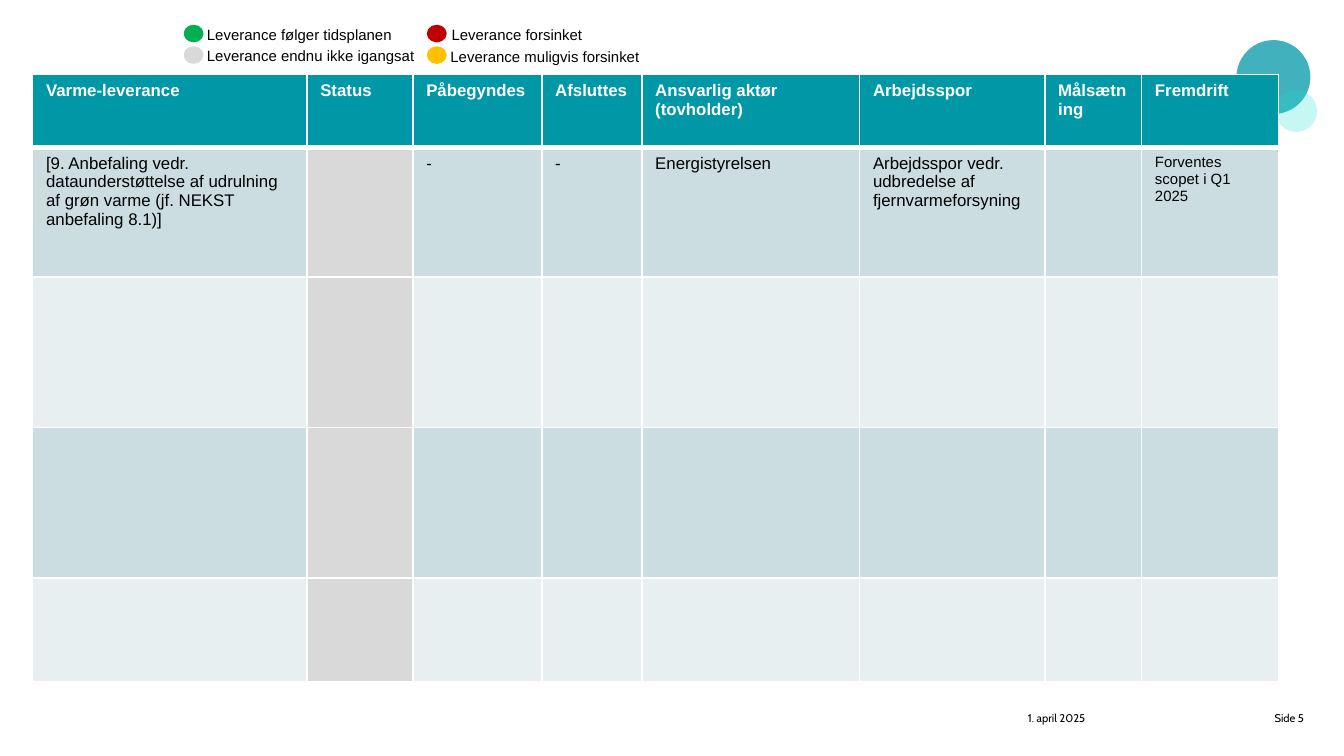
from lxml.etree import SubElement
from pptx import Presentation
from pptx.dml.color import RGBColor
from pptx.enum.shapes import MSO_SHAPE
from pptx.enum.text import MSO_AUTO_SIZE, PP_ALIGN
from pptx.oxml.ns import qn
from pptx.util import Pt

THEME = {
    "font": "Arial", "footer_font": "Cabin",
    "body_size": 9, "small_size": 8, "footer_size": 6,
    "text": "000000", "white": "FFFFFF",
    "teal": "0097A7", "mint": "1DE2CD",
    "band_dark": "CCDDE1", "band_light": "E7EFF1", "grey": "D9D9D9",
    "green": "00B050", "red": "C00000", "yellow": "FFC000",
}

# left, top, diameter, colour, opacity in percent
CIRCLES = [(662.4, 21.5, 39.6, "teal", 75), (683.3, 48.4, 22.3, "mint", 25)]

# colour, label, dot left, label left, label top, label width
LEGEND = [
    ("green", "Leverance følger tidsplanen", 99.4, 103.8, 10, 115.2),
    ("grey", "Leverance endnu ikke igangsat", 99.4, 103.8, 21.2, 127.4),
    ("red", "Leverance forsinket", 229.7, 234.8, 10, 87.8),
    ("yellow", "Leverance muligvis forsinket", 229.7, 234.2, 21.8, 116.6),
]
DOT_TOPS = {"green": 14.3, "red": 14.3, "grey": 25.8, "yellow": 25.8}

HEADERS = ["Varme-leverance", "Status", "Påbegyndes", "Afsluttes",
           "Ansvarlig aktør (tovholder)", "Arbejdsspor", "Målsætning", "Fremdrift"]
DELIVERY = [
    "[9. Anbefaling vedr. dataunderstøttelse af udrulning af grøn varme "
    "(jf. NEKST anbefaling 8.1)]",
    "", "-", "-", "Energistyrelsen",
    "Arbejdsspor vedr. udbredelse af fjernvarmeforsyning", "", "Forventes scopet i Q1 2025",
]
EMPTY_ROWS = 3
COLUMN_WIDTHS = [146.9, 56.8, 69.1, 53.6, 116.7, 99.2, 51.9, 73.4]
ROW_HEIGHTS = [38.9, 69.6, 80.6, 80.6, 55.6]
TABLE_LEFT, TABLE_TOP = 17.5, 39.9
STATUS_COLUMN, PROGRESS_COLUMN = 1, 7

# text, left, width, alignment
FOOTER = [("1. april 2025", 543.6, 97.2, PP_ALIGN.LEFT),
          ("Side 5", 642.2, 63.4, PP_ALIGN.RIGHT)]


def color(name):
    return RGBColor.from_string(THEME[name])


def write(paragraph, text, size="body_size", font="font", ink="text", bold=False):
    run = paragraph.add_run()
    run.text = text
    run.font.name = THEME[font]
    run.font.size = Pt(THEME[size])
    run.font.bold = bold
    run.font.color.rgb = color(ink)


def add_ellipse(slide, left, top, width, height, fill):
    shape = slide.shapes.add_shape(MSO_SHAPE.OVAL, Pt(left), Pt(top), Pt(width), Pt(height))
    shape.shadow.inherit = False
    shape.fill.solid()
    shape.fill.fore_color.rgb = color(fill)
    shape.line.fill.background()
    return shape


def add_circles(slide):
    for left, top, diameter, fill, opacity in CIRCLES:
        shape = add_ellipse(slide, left, top, diameter, diameter, fill)
        value = shape._element.spPr.find(qn("a:solidFill"))[0]
        SubElement(value, qn("a:alpha"), val=str(opacity * 1000))


def add_footer(slide):
    for text, left, width, alignment in FOOTER:
        box = slide.shapes.add_textbox(Pt(left), Pt(377.3), Pt(width), Pt(21.6))
        box.text_frame.word_wrap = True
        paragraph = box.text_frame.paragraphs[0]
        paragraph.alignment = alignment
        write(paragraph, text, "footer_size", "footer_font")


def add_legend(slide):
    for fill, label, dot_left, label_left, top, width in LEGEND:
        dot = add_ellipse(slide, dot_left, DOT_TOPS[fill], 8.6, 7.4, fill)
        dot.line.color.rgb = color(fill)
        dot.line.width = Pt(2)
        box = slide.shapes.add_textbox(Pt(label_left), Pt(top), Pt(width), Pt(17))
        box.text_frame.word_wrap = False
        box.text_frame.auto_size = MSO_AUTO_SIZE.SHAPE_TO_FIT_TEXT
        write(box.text_frame.paragraphs[0], label, "small_size")


def set_borders(cell, widths):
    """Draw white borders; widths maps the edges L, R, T and B to points."""
    properties = cell._tc.get_or_add_tcPr()
    for edge, width in widths.items():
        line = SubElement(properties, qn(f"a:ln{edge}"), w=str(Pt(width)))
        fill = SubElement(line, qn("a:solidFill"))
        SubElement(fill, qn("a:srgbClr"), val=THEME["white"])


def cell_fill(row, column):
    if row == 0:
        return "teal"
    if column == STATUS_COLUMN:
        return "grey"
    return "band_dark" if row % 2 else "band_light"


def add_table(slide):
    rows = [HEADERS, DELIVERY] + [[""] * len(HEADERS)] * EMPTY_ROWS
    table = slide.shapes.add_table(
        len(rows), len(HEADERS), Pt(TABLE_LEFT), Pt(TABLE_TOP),
        Pt(sum(COLUMN_WIDTHS)), Pt(sum(ROW_HEIGHTS))).table
    for column, width in zip(table.columns, COLUMN_WIDTHS):
        column.width = Pt(width)
    for row, height in zip(table.rows, ROW_HEIGHTS):
        row.height = Pt(height)
    for r, texts in enumerate(rows):
        for c, text in enumerate(texts):
            cell = table.cell(r, c)
            set_borders(cell, {"L": 1, "R": 1, "T": 3 if r == 1 else 1, "B": 3 if r == 0 else 1})
            cell.fill.solid()
            cell.fill.fore_color.rgb = color(cell_fill(r, c))
            if text:
                header = r == 0
                small = c == PROGRESS_COLUMN and not header
                write(cell.text_frame.paragraphs[0], text,
                      size="small_size" if small else "body_size",
                      ink="white" if header else "text", bold=header)


def main():
    presentation = Presentation()
    presentation.slide_width, presentation.slide_height = Pt(720), Pt(405)
    slide = presentation.slides.add_slide(presentation.slide_layouts[6])
    add_circles(slide)
    add_footer(slide)
    add_legend(slide)
    add_table(slide)
    presentation.save("out.pptx")


if __name__ == "__main__":
    main()
